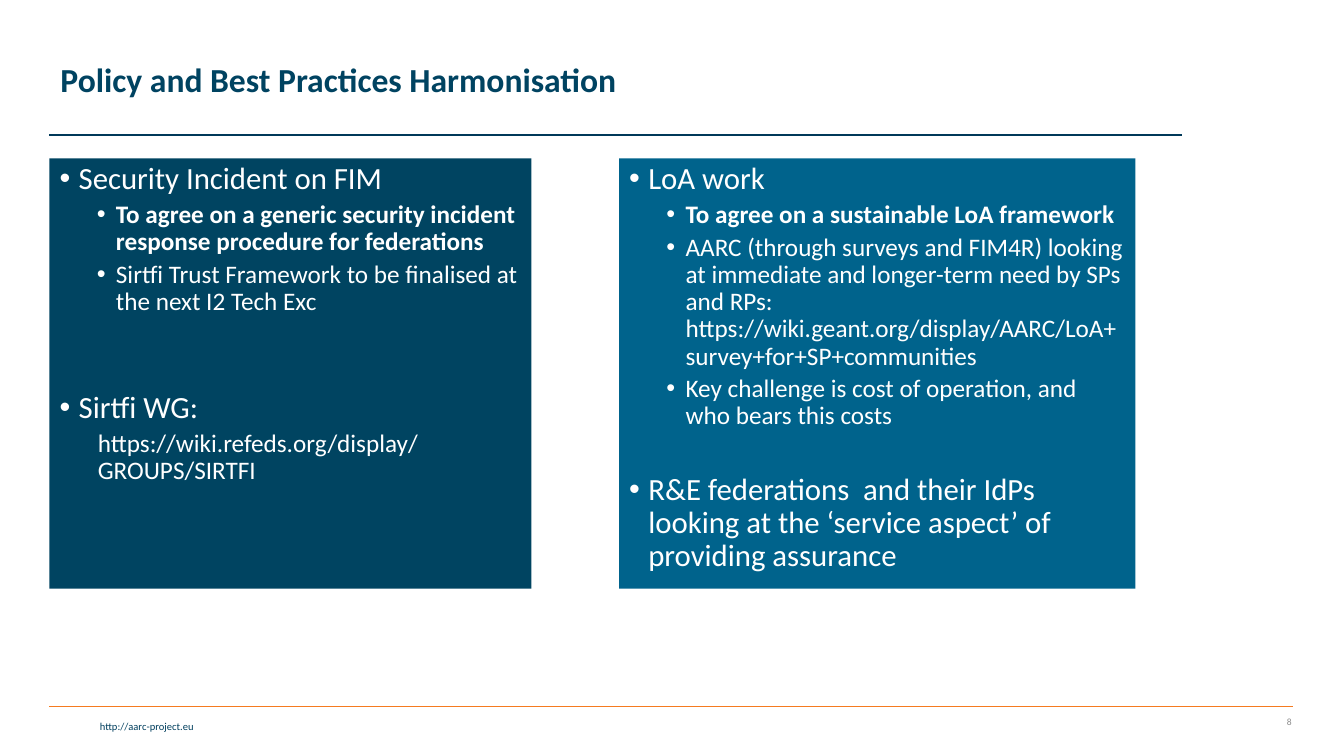
from lxml import etree
from pptx import Presentation
from pptx import util as u
from pptx.dml.color import RGBColor
from pptx.enum import shapes, text
from pptx.oxml import ns

COLORS = {"title": "004361", "footer": "003F5E", "rule": "003959", "orange": "F57B20",
          "navy": "004461", "blue": "00638C", "white": "FFFFFF", "grey": "8C8C8C"}
FONT = "Calibri"
LEFT = 0.49
PANEL_TOP, PANEL_HEIGHT = 1.57, 4.27
FOOTER_TOP = 7.01
BLANK_LINE = 23.5  # points taken by one empty sub-item line

# Level name: left margin and hanging indent (inches), size, space before (points)
LEVELS = {"item": (0.19, -0.19, 22, 7.5),
          "sub": (0.56, -0.19, 18, 3.8),
          "strong": (0.56, -0.19, 18, 3.8),
          "link": (0.38, 0, 18, 3.8)}

# Each entry: level, wording, empty lines above
INCIDENT = [
    ("item", "Security Incident on FIM", 0),
    ("strong", "To agree on a generic security incident response procedure for federations", 0),
    ("sub", "Sirtfi Trust Framework to be finalised at the next I2 Tech Exc", 0),
    ("item", "Sirtfi WG:", 2),
    ("link", "https://wiki.refeds.org/display/GROUPS/SIRTFI", 0),
]
ASSURANCE = [
    ("item", "LoA work", 0),
    ("strong", "To agree on a sustainable LoA framework", 0),
    ("sub", "AARC (through surveys and FIM4R) looking at immediate and longer-term need "
            "by SPs and RPs: https://wiki.geant.org/display/AARC/LoA+survey+for+SP+communities", 0),
    ("sub", "Key challenge is cost of operation, and who bears this costs", 0),
    ("item", "R&E federations  and their IdPs looking at the ‘service aspect’ "
             "of providing assurance", 1),
]


def color(name):
    return RGBColor.from_string(COLORS[name])


def place(shape, left, top, width, height):
    shape.left, shape.top = u.Inches(left), u.Inches(top)
    shape.width, shape.height = u.Inches(width), u.Inches(height)


def style(paragraph, size, color_name, bold=False):
    for run in paragraph.runs:
        run.font.name = FONT
        run.font.size = u.Pt(size)
        run.font.bold = bold
        run.font.color.rgb = color(color_name)


def set_bullet(paragraph, margin, indent):
    properties = paragraph._p.get_or_add_pPr()
    properties.set("marL", str(u.Inches(margin)))
    properties.set("indent", str(u.Inches(indent)))
    if indent:
        etree.SubElement(properties, ns.qn("a:buFont")).set("typeface", "Arial")
        etree.SubElement(properties, ns.qn("a:buChar")).set("char", "•")
    else:
        etree.SubElement(properties, ns.qn("a:buNone"))


def add_rule(slide, left, right, y, color_name):
    line = slide.shapes.add_connector(shapes.MSO_CONNECTOR.STRAIGHT, u.Inches(left),
                                      u.Inches(y), u.Inches(right), u.Inches(y))
    line.line.color.rgb = color(color_name)
    line.line.width = u.Pt(1)
    etree.SubElement(line._element.spPr, ns.qn("a:effectLst"))


def add_title(slide, left, top, width, height):
    title = slide.shapes.title
    place(title, left, top, width, height)
    frame = title.text_frame
    frame.text = "Policy and Best Practices Harmonisation"
    frame.vertical_anchor = text.MSO_ANCHOR.MIDDLE
    frame.auto_size = text.MSO_AUTO_SIZE.NONE
    paragraph = frame.paragraphs[0]
    paragraph.alignment = text.PP_ALIGN.LEFT
    paragraph.line_spacing = 0.9
    style(paragraph, 24, "title", bold=True)
    add_rule(slide, LEFT, 11.72, 1.34, "rule")


def fill_panel(panel, left, width, fill, entries):
    place(panel, left, PANEL_TOP, width, PANEL_HEIGHT)
    panel.fill.solid()
    panel.fill.fore_color.rgb = color(fill)
    frame = panel.text_frame
    frame.auto_size = text.MSO_AUTO_SIZE.NONE
    frame.text = "\n".join(wording for _, wording, _ in entries)
    for number, (paragraph, entry) in enumerate(zip(frame.paragraphs, entries)):
        level, _, empty_lines = entry
        margin, indent, size, before = LEVELS[level]
        paragraph.level = 0 if level == "item" else 1
        set_bullet(paragraph, margin, indent)
        paragraph.line_spacing = 0.9
        paragraph.space_before = u.Pt(before + empty_lines * BLANK_LINE if number else 0)
        style(paragraph, size, "white", bold=level == "strong")


def add_footer_text(slide, box, wording, size, color_name, anchor):
    label = slide.shapes.add_textbox(*map(u.Inches, box))
    frame = label.text_frame
    frame.word_wrap = True
    frame.vertical_anchor = anchor
    frame.text = wording
    frame.paragraphs[0].alignment = text.PP_ALIGN.RIGHT
    style(frame.paragraphs[0], size, color_name)


def add_footer(slide):
    add_rule(slide, LEFT, 12.82, FOOTER_TOP, "orange")
    add_footer_text(slide, (0.03, FOOTER_TOP + 0.08, 1.99, 0.23), "http://aarc-project.eu",
                    7.5, "footer", text.MSO_ANCHOR.TOP)
    add_footer_text(slide, (12.1, FOOTER_TOP, 0.81, 0.3), "8",
                    6.8, "grey", text.MSO_ANCHOR.MIDDLE)


def main():
    presentation = Presentation()
    presentation.slide_width = u.Inches(13.33)
    presentation.slide_height = u.Inches(7.5)
    two_content = presentation.slide_layouts.get_by_name("Two Content")
    slide = presentation.slides.add_slide(two_content)

    # Title band
    add_title(slide, 0.5, 0.08, 10.51, 1.45)
    # Two panels
    fill_panel(slide.placeholders[1], LEFT, 4.78, "navy", INCIDENT)
    fill_panel(slide.placeholders[2], 6.14, 5.12, "blue", ASSURANCE)
    # Footer
    add_footer(slide)

    presentation.save("out.pptx")


if __name__ == "__main__":
    main()
